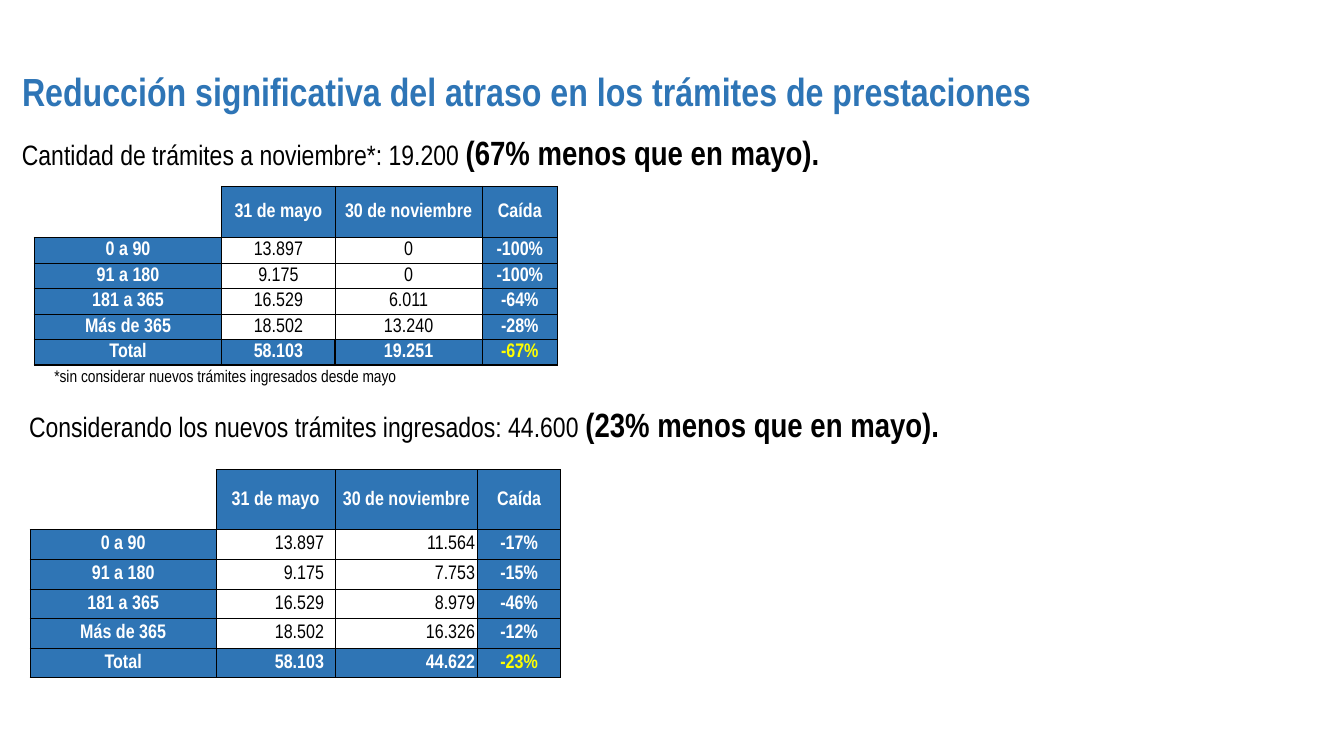
import pptx
import pptx.dml.color
import pptx.enum.text
import pptx.oxml
import pptx.oxml.ns
import pptx.util

Pt = pptx.util.Pt
ALIGN = pptx.enum.text.PP_ALIGN
ANCHOR = pptx.enum.text.MSO_ANCHOR

COLORS = {"title": "2E75B6", "cell": "2F75B5", "text": "000000",
          "light": "FFFFFF", "accent": "FFFF00", "border": "000000"}

HEADERS = ["", "31 de mayo", "30 de noviembre", "Caída"]
PERIODS = ["0 a 90", "91 a 180", "181 a 365", "Más de 365", "Total"]
MAY = ["13.897", "9.175", "16.529", "18.502", "58.103"]


class Deck:
    font = "Arial Narrow"

    def __init__(self):
        self.prs = pptx.Presentation()
        self.prs.slide_width, self.prs.slide_height = Pt(960), Pt(540)
        self.s = self.prs.slides.add_slide(self.prs.slide_layouts[5])

    def format(self, r, size, color="text", bold=False):
        r.font.name, r.font.size, r.font.bold = self.font, Pt(size), bold
        r.font.color.rgb = pptx.dml.color.RGBColor.from_string(COLORS[color])

    def title(self, text, x, y, w, h):
        sp = self.s.shapes.title
        sp.left, sp.top, sp.width, sp.height = Pt(x), Pt(y), Pt(w), Pt(h)
        tf = sp.text_frame
        tf.text = text
        tf.word_wrap = True
        tf.auto_size = pptx.enum.text.MSO_AUTO_SIZE.NONE
        tf.vertical_anchor = ANCHOR.TOP
        p = tf.paragraphs[0]
        p.alignment = ALIGN.LEFT
        self.format(p.runs[0], 28, "title", True)

    def text(self, runs, x, y, w, h):
        """Add a one-line box from (text, size, bold) runs."""
        tf = self.s.shapes.add_textbox(Pt(x), Pt(y), Pt(w), Pt(h)).text_frame
        tf.word_wrap = True
        for text, size, bold in runs:
            r = tf.paragraphs[0].add_run()
            r.text = text
            self.format(r, size, bold=bold)

    def borders(self, cell, widths):
        """Draw the cell's sides from a dict of side letter to line width."""
        tc_pr = cell._tc.get_or_add_tcPr()
        for side, width in widths.items():
            tc_pr.append(pptx.oxml.parse_xml(
                f'<a:ln{side} {pptx.oxml.ns.nsdecls("a")} w="{Pt(width)}">'
                f'<a:solidFill><a:srgbClr val="{COLORS["border"]}"/></a:solidFill>'
                f'</a:ln{side}>'))

    def cell(self, cell, text, filled, color, align, right):
        cell.margin_left = cell.margin_top = Pt(0.7)
        cell.margin_right, cell.margin_bottom = Pt(right), 0
        cell.vertical_anchor = ANCHOR.MIDDLE
        if filled:
            cell.fill.solid()
            cell.fill.fore_color.rgb = pptx.dml.color.RGBColor.from_string(COLORS["cell"])
        else:
            cell.fill.background()
        cell.text = text
        p = cell.text_frame.paragraphs[0]
        p.alignment = align
        for r in p.runs:
            self.format(r, 14, color, filled)

    def table(self, x, y, widths, header_height, row_height, november, drop, insets=None):
        """Add a backlog table; insets right-align the figures of their columns."""
        insets = insets or {}
        rows = [HEADERS, *zip(PERIODS, MAY, november, drop)]
        last, last_col = len(rows) - 1, len(widths) - 1
        heights = [header_height] + [row_height] * last
        table = self.s.shapes.add_table(len(rows), len(widths), Pt(x), Pt(y),
                                        Pt(sum(widths)), Pt(sum(heights))).table
        table.first_row = table.horz_banding = False
        for column, width in zip(table.columns, widths):
            column.width = Pt(width)
        for i, row in enumerate(rows):
            table.rows[i].height = Pt(heights[i])
            for j, text in enumerate(row):
                cell = table.cell(i, j)
                corner = i == j == 0
                inner = 1 if i == last else 0.5
                sides = {"L": inner if j == 2 else 1, "R": inner if j == 1 else 1,
                         "T": 1 if i == 0 else 0.5, "B": 1 if i == last else 0.5}
                self.borders(cell, {"R": 1, "B": 1} if corner else sides)
                filled = not corner and (i in (0, last) or j in (0, last_col))
                color = "light" if filled else "text"
                if (i, j) == (last, last_col):
                    color = "accent"
                figure = i > 0 and j in insets
                self.cell(cell, text, filled, color,
                          ALIGN.RIGHT if figure else ALIGN.CENTER,
                          insets[j] if figure else 0.7)


def main():
    deck = Deck()
    deck.title("Reducción significativa del atraso en los trámites de prestaciones",
               8.6, 44.6, 784, 42)
    deck.text([("Cantidad de trámites a noviembre*: 19.200 ", 20, False),
               ("(67% menos que en mayo).", 24, True)], 8.6, 90.7, 784, 36)
    deck.table(24.5, 133.2, [134, 80.8, 105.2, 53.7], 36.5, 18.2,
               ["0", "0", "6.011", "13.240", "19.251"],
               ["-100%", "-100%", "-64%", "-28%", "-67%"])
    deck.text([("*sin considerar nuevos trámites ingresados desde mayo", 12, False)],
              31.7, 257.8, 456, 21.6)
    deck.text([("Considerando los nuevos trámites ingresados: 44.600 ", 20, False),
               ("(23% menos que en mayo).", 24, True)], 13.7, 285.1, 784, 36)
    deck.table(21.6, 335.5, [132.8, 85, 102, 59], 42.8, 21.2,
               ["11.564", "7.753", "8.979", "16.326", "44.622"],
               ["-17%", "-15%", "-46%", "-12%", "-23%"], insets={1: 7.9, 2: 2})
    deck.prs.save("out.pptx")


if __name__ == "__main__":
    main()
